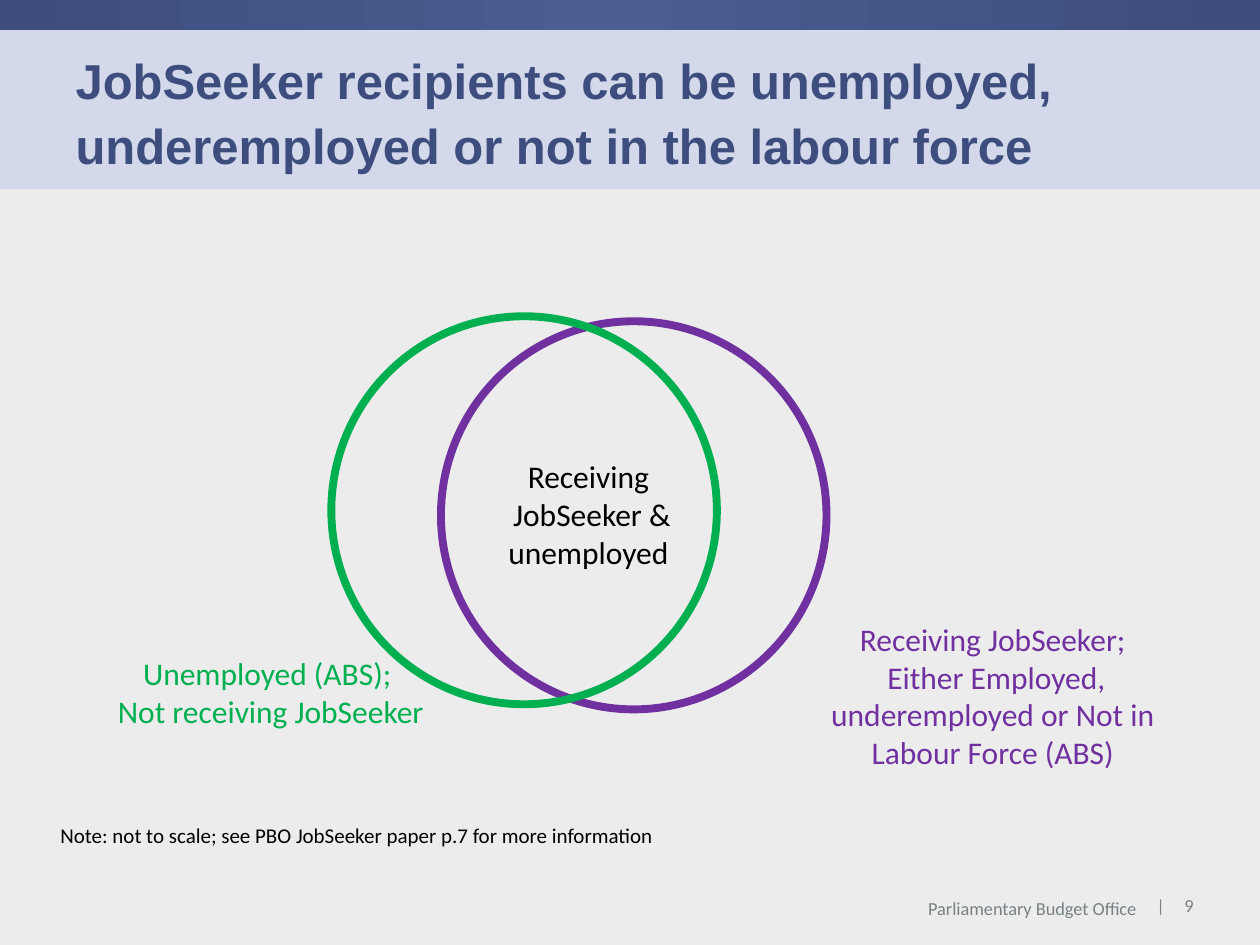
from copy import deepcopy
from dataclasses import dataclass

from pptx import Presentation
from pptx.dml.color import RGBColor as RGB
from pptx.enum.shapes import MSO_SHAPE as Shape
from pptx.enum.text import MSO_ANCHOR as Anchor, MSO_AUTO_SIZE as Fit, PP_ALIGN as Align
from pptx.util import Inches, Pt


@dataclass(frozen=True)
class Theme:
    paper: str = "F2F2F2"
    body: str = "ECECEC"
    band: str = "D3D9EA"
    navy: str = "3D4D7D"
    mid_navy: str = "4A5E91"
    receiving: str = "7030A0"
    unemployed: str = "00B050"
    ink: str = "000000"
    grey: str = "808080"
    footer_grey: str = "788184"
    heading_font: str = "Arial"
    text_font: str = "Calibri"
    heading: float = 28
    label: float = 18
    note: float = 12
    footer: float = 10.5
    divider: float = 10
    ring: float = 4.5


THEME = Theme()
WIDTH, HEIGHT = 10, 7.5
STRIP, BAND_BOTTOM = 0.23, 1.5
RING_SIZE = (3.06, 3.08)

TITLE = "JobSeeker recipients can be unemployed, underemployed or not in the labour force"
PANELS = [
    ((0, STRIP, WIDTH, HEIGHT - STRIP), THEME.body),
    ((0, STRIP, WIDTH, BAND_BOTTOM - STRIP), THEME.band),
]
FOOTER = [
    ("9", (9.4, 7.1, 0.17, 0.18), THEME.footer, THEME.grey, Align.LEFT),
    ("|", (9.18, 7.1, 0.05, 0.17), THEME.divider, THEME.grey, Align.RIGHT),
    ("Parliamentary Budget Office", (7.3, 7.12, 1.72, 0.18), THEME.footer,
     THEME.footer_grey, Align.RIGHT),
]
RINGS = [((3.5, 2.55), THEME.receiving), ((2.63, 2.51), THEME.unemployed)]
LABELS = [
    (["Receiving", "\u00a0JobSeeker &", "unemployed"], (3.79, 3.58, 1.76, 1.01), THEME.ink),
    (["Unemployed (ABS);\u00a0", "Not receiving JobSeeker"], (0.65, 5.14, 3, 0.71),
     THEME.unemployed),
    (["Receiving\u00a0JobSeeker;",
      "\u00a0Either Employed, underemployed or Not in Labour Force (ABS)"],
     (6.38, 4.87, 3, 1.62), THEME.receiving),
]
NOTE = "Note: not to scale; see PBO JobSeeker paper p.7 for more information"


def inches(values):
    return [Inches(value) for value in values]


def apply(target, settings):
    for key, value in settings.items():
        setattr(target, key, value)


def write(frame, lines, size, colour, align, font=THEME.text_font, bold=False, **spacing):
    frame.text = "\n".join(lines)
    for paragraph in frame.paragraphs:
        apply(paragraph, {"alignment": align, **spacing})
        for run in paragraph.runs:
            apply(run.font, {"name": font, "size": Pt(size), "bold": bold})
            run.font.color.rgb = RGB.from_string(colour)


def add_text(slide, lines, box, size, colour, align, **frame_settings):
    frame = slide.shapes.add_textbox(*inches(box)).text_frame
    apply(frame, {"word_wrap": True, **frame_settings})
    write(frame, lines, size, colour, align)


def add_panel(slide, box, colour):
    panel = slide.shapes.add_shape(Shape.RECTANGLE, *inches(box))
    panel.shadow.inherit = False
    panel.line.fill.background()
    panel.fill.solid()
    panel.fill.fore_color.rgb = RGB.from_string(colour)
    return panel


def add_strip(slide):
    fill = add_panel(slide, (0, 0, WIDTH, 0.24), THEME.navy).fill
    fill.gradient()
    fill.gradient_angle = 180
    stop_list = fill.gradient_stops[0].color._xFill.getparent()
    stop_list.insert(1, deepcopy(stop_list[0]))
    stops = zip(fill.gradient_stops, (0, 0.52, 1), (THEME.navy, THEME.mid_navy, THEME.navy))
    for stop, position, colour in stops:
        stop.position = position
        stop.color.rgb = RGB.from_string(colour)


def add_ring(slide, corner, colour):
    ring = slide.shapes.add_shape(Shape.OVAL, *inches(corner + RING_SIZE))
    ring.shadow.inherit = False
    ring.fill.background()
    ring.line.color.rgb = RGB.from_string(colour)
    ring.line.width = Pt(THEME.ring)


def place_title(slide):
    title = slide.shapes.title
    apply(title, dict(zip(("left", "top", "width", "height"), inches((0.5, STRIP, 9, 1.28)))))
    apply(title.text_frame, {"vertical_anchor": Anchor.MIDDLE, "word_wrap": True,
                             "auto_size": Fit.NONE})
    write(title.text_frame, [TITLE], THEME.heading, THEME.navy, Align.LEFT,
          THEME.heading_font, True, line_spacing=1.1, space_after=Pt(6))
    slide.shapes.element.append(title.element)


def main():
    deck = Presentation()
    apply(deck, {"slide_width": Inches(WIDTH), "slide_height": Inches(HEIGHT)})
    slide = deck.slides.add_slide(deck.slide_layouts[5])
    slide.background.fill.solid()
    slide.background.fill.fore_color.rgb = RGB.from_string(THEME.paper)

    for box, colour in PANELS:
        add_panel(slide, box, colour)
    add_strip(slide)
    flush = dict.fromkeys(("margin_left", "margin_top", "margin_right", "margin_bottom"), 0)
    for text, box, size, colour, align in FOOTER:
        add_text(slide, [text], box, size, colour, align, **{**flush, "word_wrap": False})
    place_title(slide)
    for corner, colour in RINGS:
        add_ring(slide, corner, colour)
    for lines, box, colour in LABELS:
        add_text(slide, lines, box, THEME.label, colour, Align.CENTER)
    add_text(slide, [NOTE], (0.38, 6.48, 7.51, 0.3), THEME.note, THEME.ink, Align.LEFT)
    deck.save("out.pptx")


if __name__ == "__main__":
    main()
